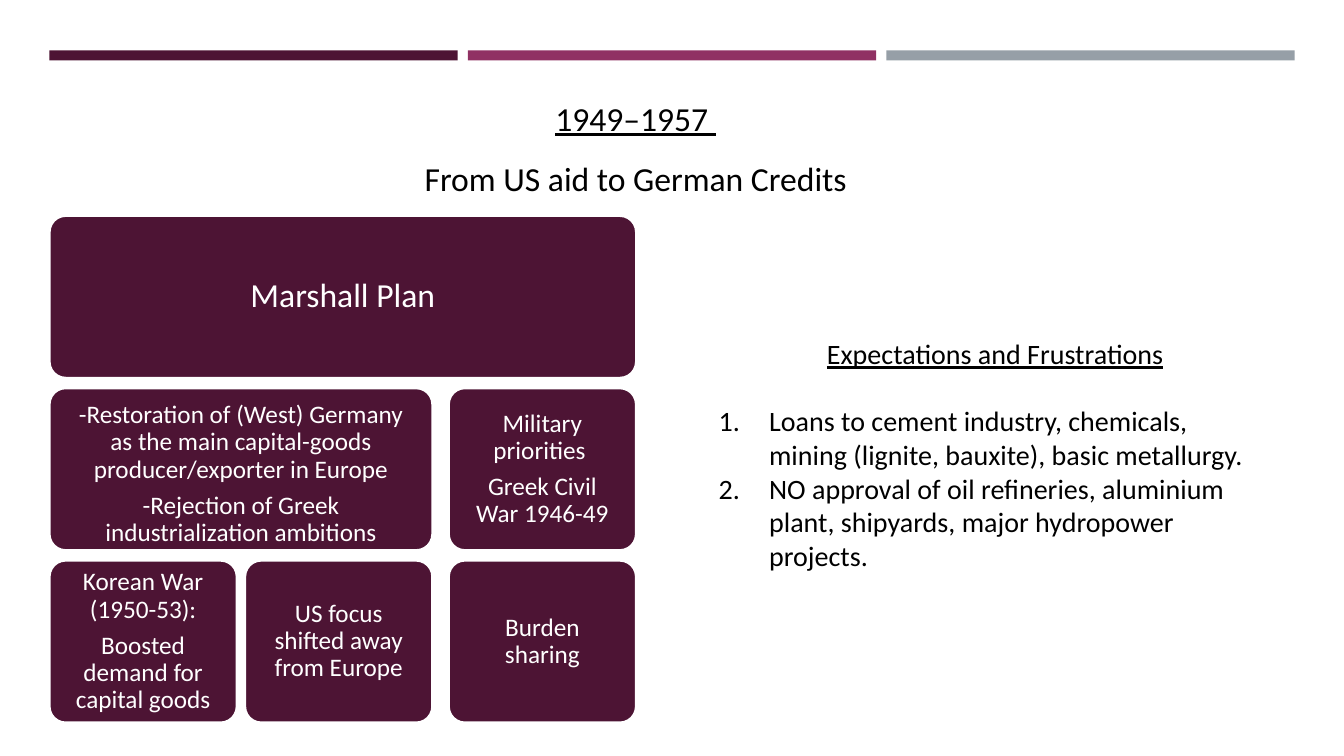
import pptx
import pptx.util
import pptx.dml.color
import pptx.enum.shapes
import pptx.enum.text
import pptx.oxml

COLORS = {"plum": "4D1434", "magenta": "903163", "gray": "969FA7", "white": "FFFFFF", "black": "000000"}
FONT = "Calibri"
SLIDE_SIZE = (13.33, 7.5)
LEFT_MARGIN = 0.49
BAR_WIDTH, BAR_PITCH = 4.05, 4.15
COLUMN_LEFTS, COLUMN_WIDTH = (LEFT_MARGIN, 2.43, 4.45), 1.86
ROW_TOP, ROW_HEIGHT, ROW_PITCH = 2.14, 1.61, 1.71

CARDS = [
    (0, 0, 3, 24, ["Marshall Plan"], {}),
    (0, 1, 2, 18, ["-Restoration of (West) Germany as the main capital-goods producer/exporter in Europe",
                   "-Rejection of Greek industrialization ambitions"], {"bottom": 0.02}),
    (2, 1, 1, 18, ["Military priorities ", "Greek Civil War 1946-49"], {}),
    (0, 2, 1, 18, ["Korean War (1950-53):", "Boosted demand for capital goods"], {}),
    (1, 2, 1, 18, ["US focus shifted away from Europe"], {}),
    (2, 2, 1, 18, ["Burden sharing"], {}),
]
LOANS = [
    "Loans to cement industry, chemicals, mining (lignite, bauxite), basic metallurgy.",
    "NO approval of oil refineries, aluminium plant, shipyards, major hydropower projects.",
]


def color(name):
    """Return the named palette color."""
    return pptx.dml.color.RGBColor.from_string(COLORS[name])


def write(frame, text, size=20, ink="black", underline=False, align="CENTER", spacing=1.0, after=0, numbered=False):
    """Add one formatted paragraph to a text frame."""
    paragraph = frame.paragraphs[0] if not frame.text else frame.add_paragraph()
    paragraph.alignment = getattr(pptx.enum.text.PP_ALIGN, align)
    paragraph.line_spacing = spacing
    paragraph.space_before = pptx.util.Pt(0)
    paragraph.space_after = pptx.util.Pt(after)
    run = paragraph.add_run()
    run.text = text
    run.font.name = FONT
    run.font.size = pptx.util.Pt(size)
    run.font.underline = underline
    run.font.color.rgb = color(ink)
    if numbered:
        properties = paragraph._p.get_or_add_pPr()
        indent = pptx.util.Inches(0.5)
        properties.set("marL", str(indent))
        properties.set("indent", str(-indent))
        properties.append(pptx.oxml.parse_xml(
            '<a:buAutoNum xmlns:a="http://schemas.openxmlformats.org/drawingml/2006/main" type="arabicPeriod"/>'))


class SlideBuilder:
    """Holds the slide and draws its kinds of element."""

    def __init__(self, presentation):
        """Add a title-only slide."""
        self.slide = presentation.slides.add_slide(presentation.slide_layouts[5])

    def title(self, box, lines):
        """Place the title, with its first line underlined."""
        shape = self.slide.shapes.title
        shape.left, shape.top, shape.width, shape.height = map(pptx.util.Inches, box)
        frame = shape.text_frame
        frame.auto_size = pptx.enum.text.MSO_AUTO_SIZE.NONE
        frame.vertical_anchor = pptx.enum.text.MSO_ANCHOR.TOP
        for index, line in enumerate(lines):
            write(frame, line, size=24, underline=index == 0, spacing=1.5)

    def block(self, kind, box, fill):
        """Draw a filled shape without outline or shadow."""
        shape = self.slide.shapes.add_shape(kind, *map(pptx.util.Inches, box))
        shape.shadow.inherit = False
        shape.fill.solid()
        shape.fill.fore_color.rgb = color(fill)
        shape.line.fill.background()
        return shape

    def bar(self, column, fill):
        """Draw one of the bars across the top."""
        box = (LEFT_MARGIN + column * BAR_PITCH, 0.5, BAR_WIDTH, 0.1)
        self.block(pptx.enum.shapes.MSO_SHAPE.RECTANGLE, box, fill)

    def card(self, column, row, span, size, lines, bottom=0.12):
        """Draw a rounded card that spans grid columns."""
        left = COLUMN_LEFTS[column]
        width = COLUMN_LEFTS[column + span - 1] + COLUMN_WIDTH - left
        box = (left, ROW_TOP + row * ROW_PITCH, width, ROW_HEIGHT)
        shape = self.block(pptx.enum.shapes.MSO_SHAPE.ROUNDED_RECTANGLE, box, "plum")
        shape.adjustments[0] = 0.1
        shape.line.color.rgb = color("white")
        shape.line.width = pptx.util.Pt(1.75)
        frame = shape.text_frame
        frame.word_wrap = True
        frame.vertical_anchor = pptx.enum.text.MSO_ANCHOR.MIDDLE
        frame.margin_left = frame.margin_right = frame.margin_top = pptx.util.Inches(0.12)
        frame.margin_bottom = pptx.util.Inches(bottom)
        for line in lines:
            write(frame, line, size=size, ink="white", spacing=0.9, after=size * 0.35)

    def numbered_list(self, box, heading, items):
        """Write an underlined heading above a numbered list."""
        frame = self.slide.shapes.add_textbox(*map(pptx.util.Inches, box)).text_frame
        frame.word_wrap = True
        write(frame, heading, underline=True, after=24)
        for item in items:
            write(frame, item, align="LEFT", numbered=True)


def main():
    """Build and save the slide."""
    presentation = pptx.Presentation()
    presentation.slide_width, presentation.slide_height = map(pptx.util.Inches, SLIDE_SIZE)
    builder = SlideBuilder(presentation)
    for column, fill in enumerate(("plum", "magenta", "gray")):
        builder.bar(column, fill)
    builder.title((3.85, 0.72, 4.91, 1.24), ["1949–1957 ", "From US aid to German Credits"])
    for column, row, span, size, lines, margins in CARDS:
        builder.card(column, row, span, size, lines, **margins)
    builder.numbered_list((7.03, 3.29, 5.68, 2.73), "Expectations and Frustrations", LOANS)
    presentation.save("out.pptx")


if __name__ == "__main__":
    main()
